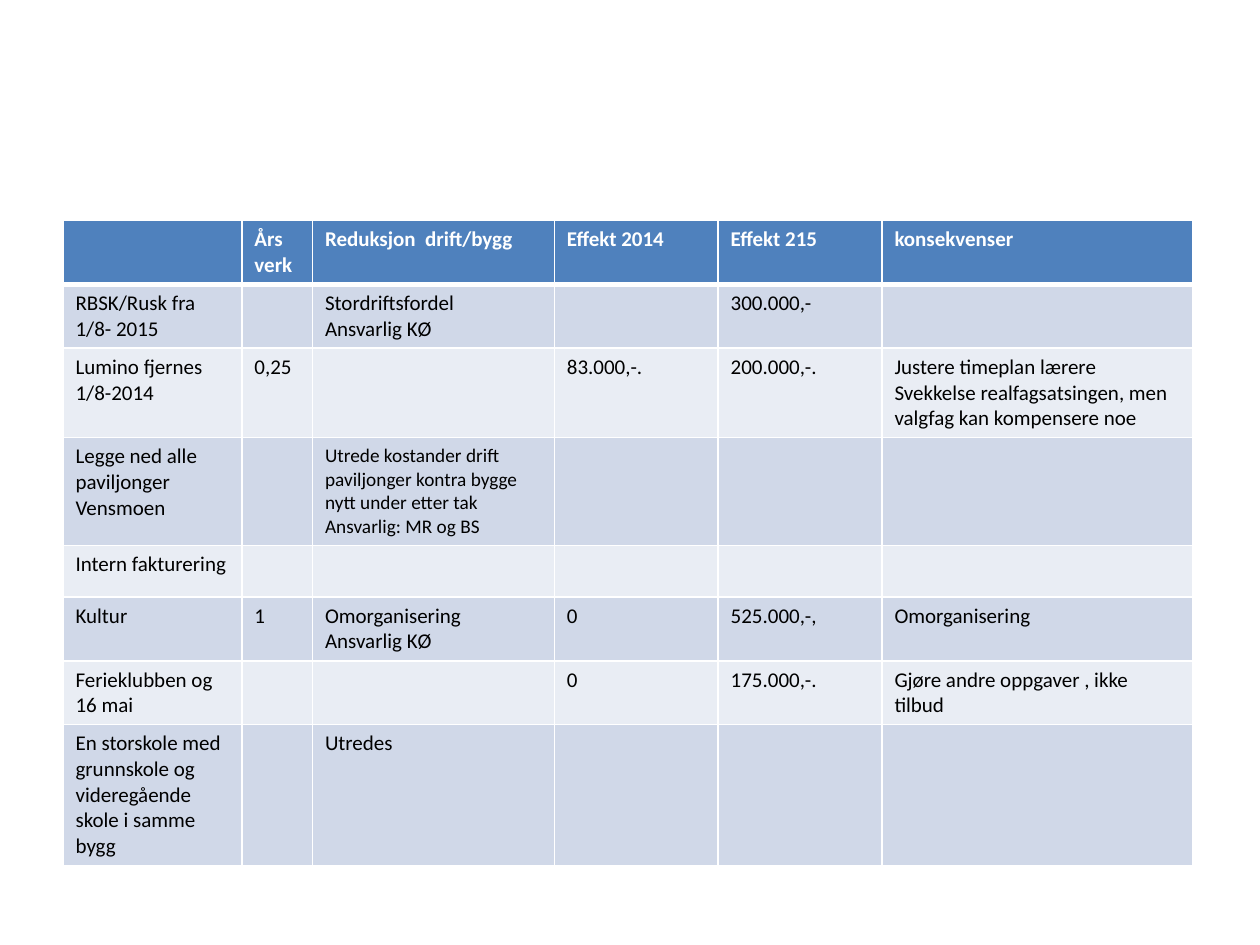
from dataclasses import dataclass

from lxml.etree import SubElement
from pptx import Presentation
from pptx.dml.color import RGBColor as Rgb
from pptx.oxml.ns import qn
from pptx.util import Inches, Pt


@dataclass(frozen=True)
class Theme:
    """Colours and type sizes of the slide."""

    head: str = "4F81BD"
    odd: str = "D0D8E8"
    even: str = "E9EDF4"
    light: str = "FFFFFF"
    dark: str = "000000"
    font: str = "Calibri"
    size: int = 12
    small: int = 11
    thin: int = 1
    thick: int = 3


THEME = Theme()
SMALL = (3, 2)
COLS = [1.42, 0.56, 1.92, 1.3, 1.3, 2.47]
ROW = 0.41
ROWS = [
    ["", "Års\nverk", "Reduksjon  drift/bygg", "Effekt 2014", "Effekt 215", "konsekvenser"],
    ["RBSK/Rusk fra 1/8- 2015", "", "Stordriftsfordel\nAnsvarlig KØ", "", "300.000,-", ""],
    ["Lumino fjernes 1/8-2014", "0,25", "", "83.000,-.", "200.000,-.",
     "Justere timeplan lærere\nSvekkelse realfagsatsingen, men valgfag kan kompensere noe"],
    ["Legge ned alle paviljonger Vensmoen", "",
     "Utrede kostander drift paviljonger kontra bygge nytt under etter tak\n"
     "Ansvarlig: MR og BS", "", "", ""],
    ["Intern fakturering", "", "", "", "", ""],
    ["Kultur", "1", "Omorganisering\nAnsvarlig KØ", "0", "525.000,-,", "Omorganisering"],
    ["Ferieklubben og 16 mai", "", "", "0", "175.000,-.", "Gjøre andre oppgaver , ikke tilbud"],
    ["En storskole med grunnskole og videregående skole i samme bygg", "", "Utredes", "", "", ""],
]


def add_edge(cell, side, width):
    """Draw one border of a cell."""
    props = cell._tc.get_or_add_tcPr()
    line = SubElement(props, qn(f"a:ln{side}"), w=str(Pt(width)))
    fill = SubElement(line, qn("a:solidFill"))
    SubElement(fill, qn("a:srgbClr"), val=THEME.light)


def add_text(cell, text, size, color, bold):
    """Write each line of the text as a paragraph with one run."""
    frame = cell.text_frame
    for i, line in enumerate(text.split("\n")):
        para = frame.add_paragraph() if i else frame.paragraphs[0]
        run = para.add_run()
        run.text = line
        font = run.font
        font.name, font.size, font.bold = THEME.font, Pt(size), bold
        font.color.rgb = Rgb.from_string(color)


def style_cell(cell, row):
    """Give a cell the borders and the fill of its row."""
    widths = {
        "L": THEME.thin,
        "R": THEME.thin,
        "T": THEME.thick if row == 1 else THEME.thin,
        "B": THEME.thick if row == 0 else THEME.thin,
    }
    for side, width in widths.items():
        add_edge(cell, side, width)
    band = THEME.odd if row % 2 else THEME.even
    cell.fill.solid()
    cell.fill.fore_color.rgb = Rgb.from_string(band if row else THEME.head)


def add_plan(slide, left, top, width, height):
    """Place the table of savings in the given box."""
    shape = slide.shapes.add_table(len(ROWS), len(COLS), left, top, width, height)
    table = shape.table
    for col, share in zip(table.columns, COLS):
        col.width = int(width * share / sum(COLS))
    for r, texts in enumerate(ROWS):
        for c, text in enumerate(texts):
            cell = table.cell(r, c)
            style_cell(cell, r)
            if text:
                size = THEME.small if (r, c) == SMALL else THEME.size
                add_text(cell, text, size, THEME.dark if r else THEME.light, r == 0)


def main():
    """Build the slide and save it."""
    deck = Presentation()
    deck.slide_width, deck.slide_height = Inches(10), Inches(7.5)
    slide = deck.slides.add_slide(deck.slide_layouts[6])
    add_plan(slide, Inches(0.5), Inches(1.75), Inches(sum(COLS)), Inches(ROW * len(ROWS)))
    deck.save("out.pptx")


if __name__ == "__main__":
    main()
